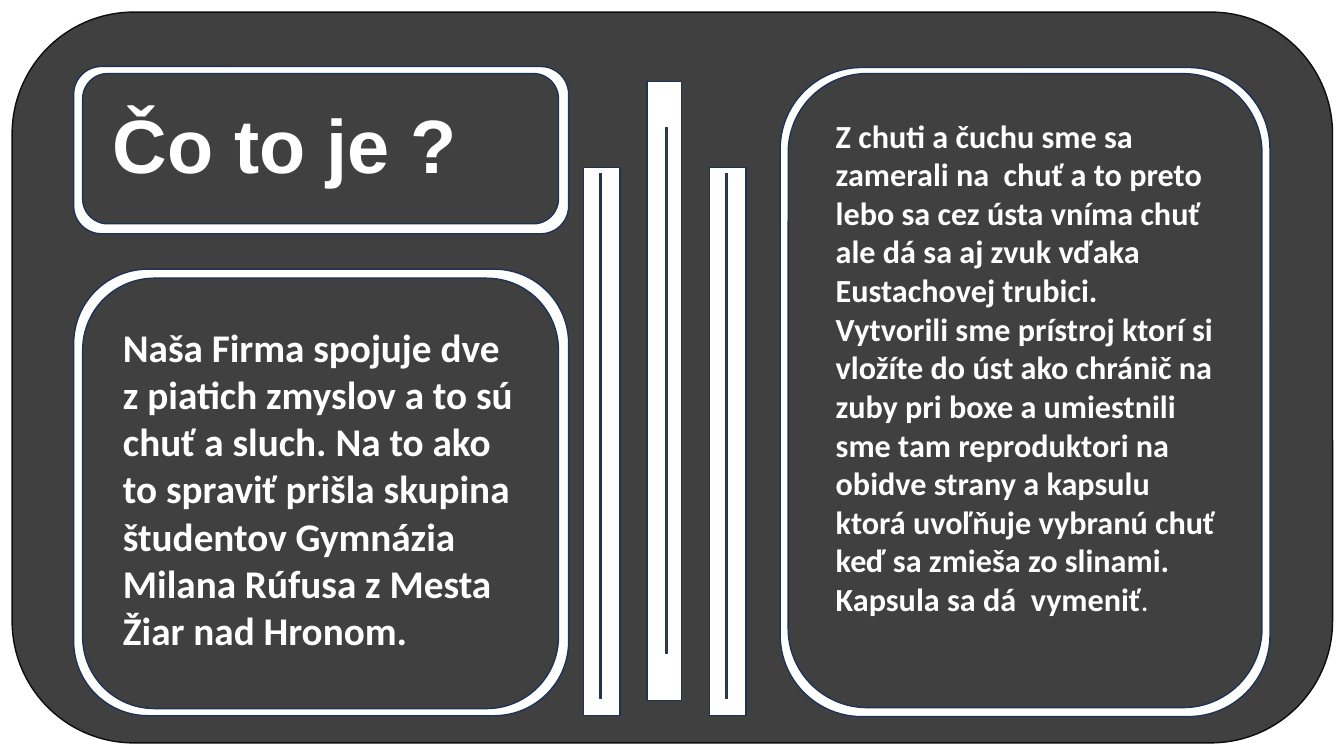
"""Build the "Čo to je ?" slide: rounded panels beside a column of bars."""
from dataclasses import dataclass

from pptx import Presentation
from pptx.dml.color import RGBColor
from pptx.enum.shapes import MSO_SHAPE
from pptx.enum.text import MSO_ANCHOR, MSO_AUTO_SIZE, PP_ALIGN
from pptx.oxml.xmlchemy import OxmlElement
from pptx.util import Inches, Pt

WHITE = RGBColor(0xFF, 0xFF, 0xFF)
DARK = RGBColor(0x40, 0x40, 0x40)
NAVY = RGBColor(0x1E, 0x32, 0x56)
BLACK = RGBColor(0x0D, 0x0D, 0x0D)
WIDTH, HEIGHT = Inches(13.333), Inches(7.5)

FRAME_FORMAT = {"auto_size": MSO_AUTO_SIZE.SHAPE_TO_FIT_TEXT, "word_wrap": True,
                "vertical_anchor": MSO_ANCHOR.TOP}
PARAGRAPH_FORMAT = {"alignment": PP_ALIGN.LEFT, "line_spacing": 1.0,
                    "space_before": Pt(0), "space_after": Pt(0)}


@dataclass(frozen=True)
class Box:
    """Position and size in percent of the slide."""
    x: float
    y: float
    w: float
    h: float

    def lengths(self) -> dict:
        """Return the shape attributes in EMU."""
        return {"left": int(WIDTH * self.x / 100), "top": int(HEIGHT * self.y / 100),
                "width": int(WIDTH * self.w / 100), "height": int(HEIGHT * self.h / 100)}


@dataclass(frozen=True)
class Nested:
    """A white outer shape with a dark inner one."""
    outer: Box
    inner: Box


@dataclass(frozen=True)
class Copy:
    """Text of one placeholder as (words, size) runs."""
    box: Box
    font: str
    runs: tuple


PANELS = [
    Nested(Box(5.48, 8.8, 36.83, 22.13), Box(6.15, 9.73, 35.4, 19.87)),
    Nested(Box(5.48, 35.6, 36.83, 59.07), Box(6.15, 36.8, 35.4, 56.93)),
    Nested(Box(58.05, 8.93, 36.45, 85.87), Box(58.65, 9.73, 35.25, 83.87)),
]
BARS = [
    Nested(Box(43.43, 22.13, 2.7, 72.53), Box(44.63, 22.93, 0.15, 69.47)),
    Nested(Box(48.15, 10.8, 2.55, 81.87), Box(49.5, 16.93, 0.15, 69.47)),
    Nested(Box(52.8, 22.13, 2.7, 72.53), Box(54, 22.93, 0.15, 69.47)),
]
TEXTS = [
    Copy(Box(7.65, 12.27, 32.33, 13.47), "Arial", (("Čo to je ?", 54),)),
    Copy(Box(8.4, 42.13, 30.6, 45.33), "Calibri", ((
        "Naša Firma spojuje dve z piatich zmyslov a to sú chuť a sluch. "
        "Na to ako to spraviť prišla skupina študentov Gymnázia Milana Rúfusa "
        "z Mesta Žiar nad Hronom.", 28),)),
    Copy(Box(61.43, 14.67, 29.85, 68.4), "Calibri", ((
        "Z chuti a čuchu sme sa zamerali na  chuť a to preto lebo sa cez ústa "
        "vníma chuť ale dá sa aj zvuk vďaka Eustachovej trubici. Vytvorili sme "
        "prístroj ktorí si vložíte do úst ako chránič na zuby pri boxe a umiestnili "
        "sme tam reproduktori na obidve strany a kapsulu ktorá uvoľňuje vybranú "
        "chuť keď sa zmieša zo slinami. Kapsula sa dá  vymeniť", 23), (".", 18))),
]


def set_all(target, values: dict) -> None:
    """Set every attribute named in values."""
    for name, value in values.items():
        setattr(target, name, value)


def add_block(s, kind: MSO_SHAPE, box: Box, fill: RGBColor, line: RGBColor = NAVY) -> None:
    """Draw one filled and outlined shape."""
    sp = s.shapes.add_shape(kind, **box.lengths())
    sp.shadow.inherit = False
    sp.fill.solid()
    sp.fill.fore_color.rgb = fill
    sp.line.color.rgb = line
    sp.line.width = Pt(1)


def add_nested(s, kind: MSO_SHAPE, items: list[Nested]) -> None:
    """Draw each white shape with its dark inner shape."""
    for item in items:
        add_block(s, kind, item.outer, WHITE)
        add_block(s, kind, item.inner, DARK)


def fill_placeholder(s, sp, text: Copy) -> None:
    """Move a placeholder to the front and write its text without a bullet."""
    s.shapes._spTree.append(sp._element)
    set_all(sp, text.box.lengths())
    tf = sp.text_frame
    set_all(tf, FRAME_FORMAT)
    p = tf.paragraphs[0]
    set_all(p, PARAGRAPH_FORMAT)
    pPr = p._p.get_or_add_pPr()
    pPr.set("marL", "0")
    pPr.set("indent", "0")
    pPr.append(OxmlElement("a:buNone"))
    for words, size in text.runs:
        r = p.add_run()
        r.text = words
        set_all(r.font, {"name": text.font, "size": Pt(size), "bold": True})
        r.font.color.rgb = WHITE


def main() -> None:
    """Build and save the slide."""
    prs = Presentation()
    set_all(prs, {"slide_width": WIDTH, "slide_height": HEIGHT})
    s = prs.slides.add_slide(prs.slide_layouts[3])
    placeholders = list(s.placeholders)
    add_block(s, MSO_SHAPE.ROUNDED_RECTANGLE, Box(0.9, 1.6, 98.25, 96.67), DARK, BLACK)
    add_nested(s, MSO_SHAPE.ROUNDED_RECTANGLE, PANELS)
    add_nested(s, MSO_SHAPE.RECTANGLE, BARS)
    for sp, text in zip(placeholders, TEXTS):
        fill_placeholder(s, sp, text)
    prs.save("out.pptx")


if __name__ == "__main__":
    main()
